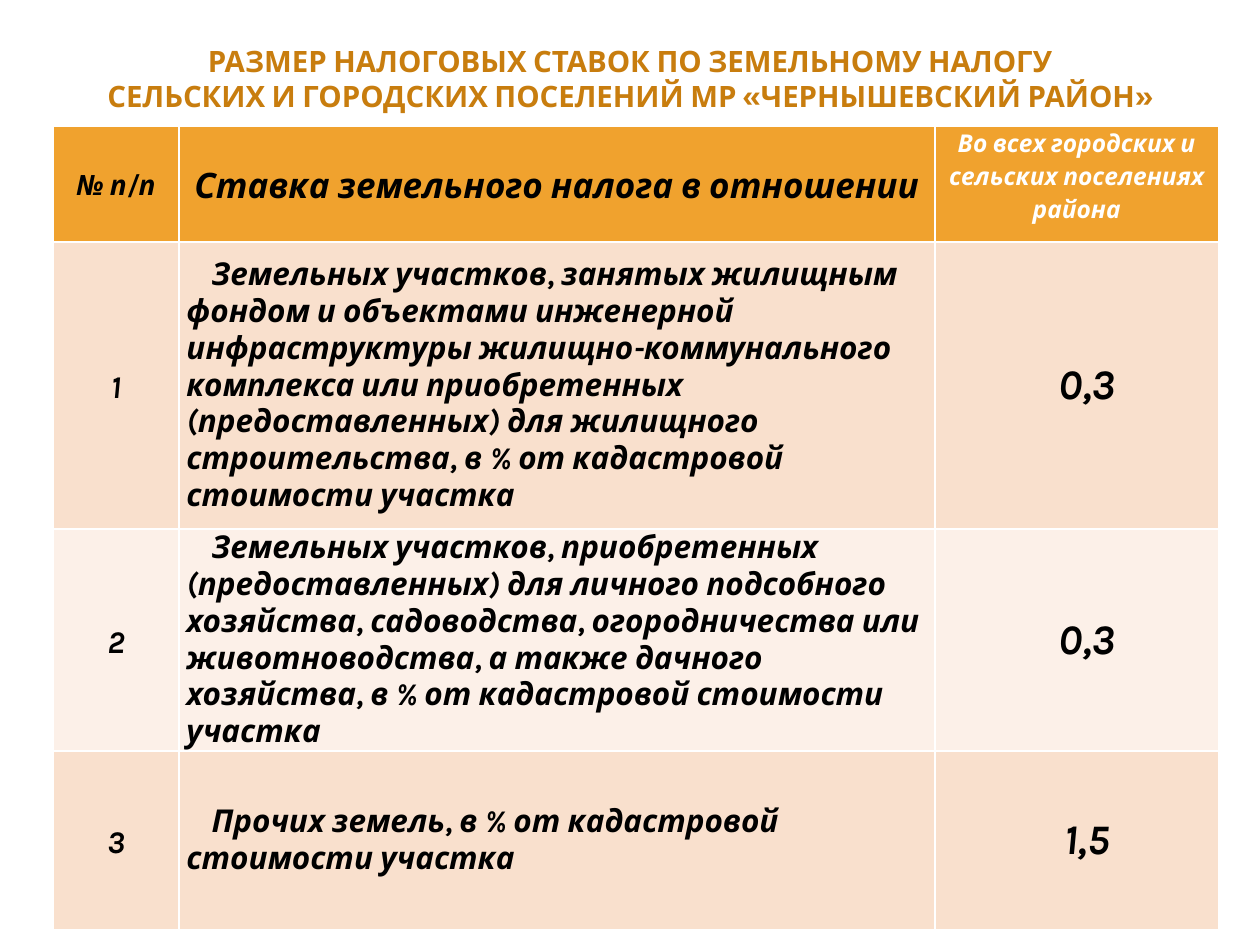
from pptx import Presentation
from pptx import util as u
from pptx.dml.color import RGBColor
from pptx.enum import text

Inches, Pt = u.Inches, u.Pt

BLACK = RGBColor(0x00, 0x00, 0x00)
WHITE = RGBColor(0xFF, 0xFF, 0xFF)
TITLE = RGBColor(0xC8, 0x7D, 0x0E)
HEADER = RGBColor(0xF0, 0xA2, 0x2E)
BANDS = [RGBColor(0xF9, 0xE0, 0xCD), RGBColor(0xFC, 0xF0, 0xE8)]

CENTER, LEFT = text.PP_ALIGN.CENTER, text.PP_ALIGN.LEFT
MIDDLE, TOP = text.MSO_ANCHOR.MIDDLE, text.MSO_ANCHOR.TOP

TITLE_LINES = [
    "РАЗМЕР НАЛОГОВЫХ СТАВОК ПО ЗЕМЕЛЬНОМУ НАЛОГУ",
    "СЕЛЬСКИХ И ГОРОДСКИХ ПОСЕЛЕНИЙ МР «ЧЕРНЫШЕВСКИЙ РАЙОН»",
]
ROWS = [
    ("№ п/п", "Ставка земельного налога в отношении",
     "Во всех городских и сельских поселениях района"),
    ("1", "Земельных участков, занятых жилищным фондом и объектами инженерной "
     "инфраструктуры жилищно-коммунального комплекса или приобретенных "
     "(предоставленных) для жилищного строительства, в % от кадастровой "
     "стоимости участка", "0,3"),
    ("2", "Земельных участков, приобретенных (предоставленных) для личного "
     "подсобного хозяйства, садоводства, огородничества или животноводства, "
     "а также дачного хозяйства, в % от кадастровой стоимости участка", "0,3"),
    ("3", "Прочих земель, в % от кадастровой стоимости участка", "1,5"),
]
COL_WIDTHS = [1, 6, 2.25]
ROW_HEIGHTS = [0.92, 2.28, 1.63, 1.42]

# One entry per column: size, colour, alignment, line spacing, first-line indent, anchor
HEADER_FORMATS = [
    (16, BLACK, CENTER, 1.15, 0, MIDDLE),
    (20, BLACK, CENTER, 1.15, 0, MIDDLE),
    (14, WHITE, CENTER, 1.15, 0, TOP),
]
BODY_FORMATS = [
    (18, BLACK, CENTER, 1.15, 0, MIDDLE),
    (18, BLACK, LEFT, 1, 0.2, MIDDLE),
    (24, BLACK, CENTER, 1, 0.16, MIDDLE),
]


def set_attrs(obj, values):
    for name, value in values.items():
        setattr(obj, name, value)


def add_run(p, words, color, **font):
    r = p.add_run()
    r.text = words
    set_attrs(r.font, font)
    r.font.color.rgb = color


prs = Presentation()
prs.slide_width, prs.slide_height = Inches(10), Inches(7.5)
s = prs.slides.add_slide(prs.slide_layouts[5])

title = s.shapes.title
set_attrs(title, {"left": Inches(0.5), "top": Inches(0.33),
                  "width": Inches(9), "height": Inches(0.58)})
tf = title.text_frame
set_attrs(tf, {"word_wrap": True, "auto_size": text.MSO_AUTO_SIZE.NONE,
               "vertical_anchor": MIDDLE, "margin_top": 0, "margin_bottom": 0})
for i, line in enumerate(TITLE_LINES):
    p = tf.add_paragraph() if i else tf.paragraphs[0]
    p.alignment = CENTER
    add_run(p, line, TITLE, name="Cabin", size=Pt(16.8), bold=True)

table = s.shapes.add_table(
    len(ROWS), len(COL_WIDTHS), Inches(0.42), Inches(1),
    Inches(sum(COL_WIDTHS)), Inches(sum(ROW_HEIGHTS))).table
for column, width in zip(table.columns, COL_WIDTHS):
    column.width = Inches(width)
for row, height in zip(table.rows, ROW_HEIGHTS):
    row.height = Inches(height)

for i, row in enumerate(ROWS):
    formats = BODY_FORMATS if i else HEADER_FORMATS
    fill = BANDS[(i - 1) % 2] if i else HEADER
    for j, (words, fmt) in enumerate(zip(row, formats)):
        size, color, align, spacing, indent, anchor = fmt
        cell = table.cell(i, j)
        cell.fill.solid()
        cell.fill.fore_color.rgb = fill
        set_attrs(cell, {"margin_left": Inches(0.06), "margin_right": Inches(0.06),
                         "margin_top": 0, "margin_bottom": 0,
                         "vertical_anchor": anchor})
        p = cell.text_frame.paragraphs[0]
        set_attrs(p, {"alignment": align, "line_spacing": spacing})
        if indent:
            p._p.get_or_add_pPr().set("indent", str(Inches(indent)))
        add_run(p, words, color, name="Karla", size=Pt(size), bold=True, italic=True)

prs.save("out.pptx")
